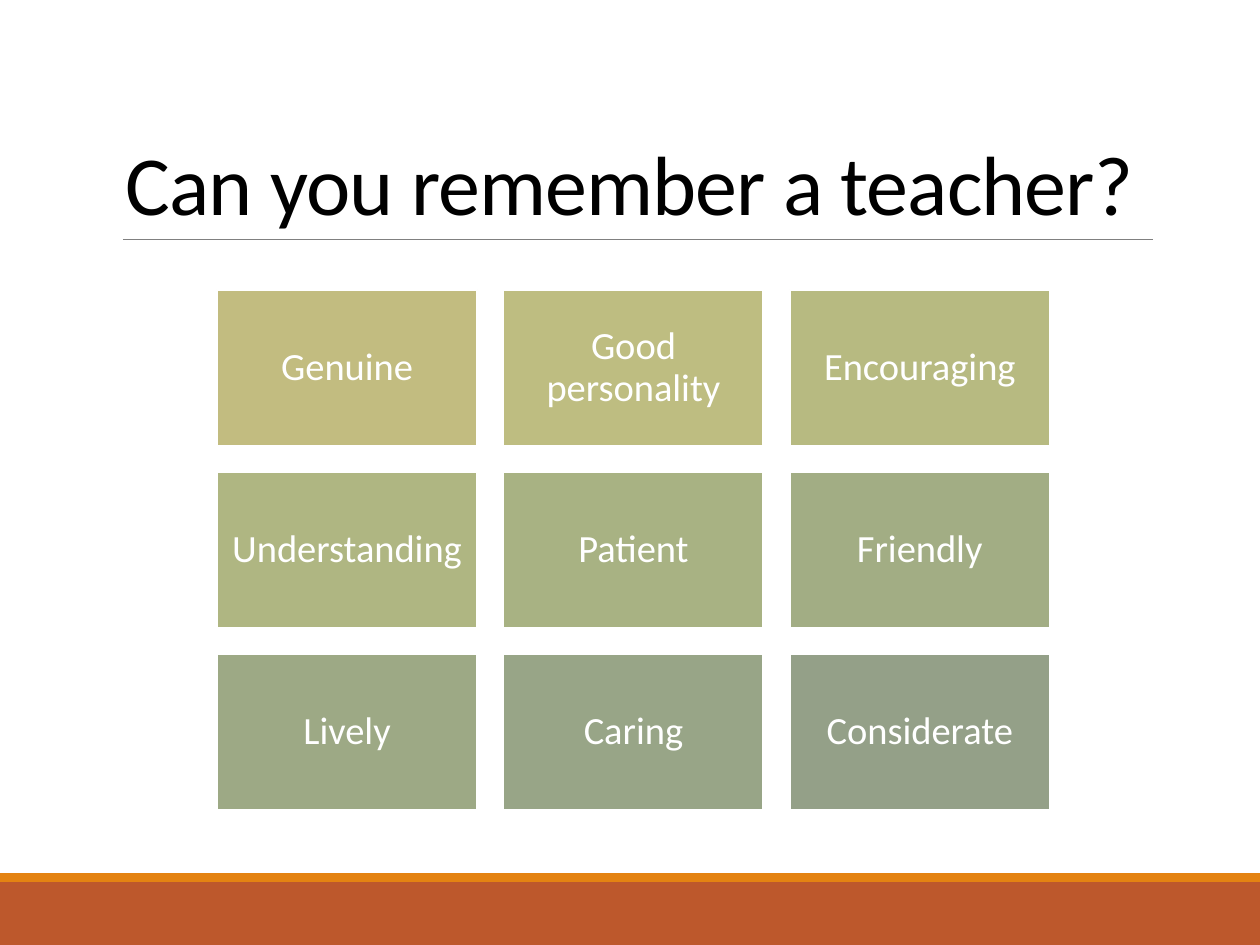
from pptx import Presentation
from pptx.dml.color import RGBColor
from pptx.enum.shapes import MSO_CONNECTOR, MSO_SHAPE
from pptx.enum.text import MSO_ANCHOR, MSO_AUTO_SIZE, PP_ALIGN
from pptx.oxml.ns import qn
from pptx.util import Pt
from lxml.etree import SubElement

PX_PER_INCH = 126
FONT = "Calibri"
WHITE = RGBColor(0xFF, 0xFF, 0xFF)
BLACK = RGBColor(0x00, 0x00, 0x00)
GREY = RGBColor(0x80, 0x80, 0x80)
RUST = RGBColor(0xBD, 0x58, 0x2C)
ORANGE = RGBColor(0xE4, 0x83, 0x12)

QUALITIES = [
    ("Genuine", RGBColor(0xC2, 0xBC, 0x80)),
    ("Good personality", RGBColor(0xBE, 0xBD, 0x81)),
    ("Encouraging", RGBColor(0xB7, 0xBA, 0x81)),
    ("Understanding", RGBColor(0xAF, 0xB6, 0x82)),
    ("Patient", RGBColor(0xA8, 0xB2, 0x83)),
    ("Friendly", RGBColor(0xA2, 0xAD, 0x84)),
    ("Lively", RGBColor(0x9D, 0xA9, 0x85)),
    ("Caring", RGBColor(0x98, 0xA5, 0x87)),
    ("Considerate", RGBColor(0x94, 0xA0, 0x88)),
]


def px(length):
    return round(length * 914400 / PX_PER_INCH)


def add_run(paragraph, text, size, color):
    run = paragraph.add_run()
    run.text = text
    run.font.name = FONT
    run.font.size = Pt(size)
    run.font.color.rgb = color
    return run


def add_block(slide, left, top, width, height, color):
    block = slide.shapes.add_shape(
        MSO_SHAPE.RECTANGLE, px(left), px(top), px(width), px(height))
    block.shadow.inherit = False
    block.fill.solid()
    block.fill.fore_color.rgb = color
    block.line.fill.background()
    return block


def add_footer_bands(slide, left, top, width, height):
    stripe = 9
    add_block(slide, left, top + stripe, width, height - stripe, RUST)
    add_block(slide, left, top, width, stripe, ORANGE)


def add_heading(slide, left, top, width, height, text):
    """Place the title with a rule along the bottom of its box."""
    rule_inset = 10
    bottom = px(top + height)
    rule = slide.shapes.add_connector(
        MSO_CONNECTOR.STRAIGHT, px(left + rule_inset), bottom, px(left + width), bottom)
    rule.line.color.rgb = GREY
    rule.line.width = Pt(0.5)
    SubElement(rule._element.spPr, qn("a:effectLst"))

    title = slide.shapes.title
    title.left, title.top = px(left), px(top)
    title.width, title.height = px(width), px(height)
    frame = title.text_frame
    frame.word_wrap = True
    frame.auto_size = MSO_AUTO_SIZE.NONE
    frame.vertical_anchor = MSO_ANCHOR.BOTTOM
    paragraph = frame.paragraphs[0]
    paragraph.alignment = PP_ALIGN.LEFT
    paragraph.line_spacing = 0.85
    run = add_run(paragraph, text, 48, BLACK)
    run.font._element.set("spc", "-50")


def add_quality_card(slide, left, top, width, height, text, color):
    card = add_block(slide, left, top, width, height, color)
    card.line.color.rgb = WHITE
    card.line.width = Pt(1.25)
    frame = card.text_frame
    frame.word_wrap = True
    frame.vertical_anchor = MSO_ANCHOR.MIDDLE
    frame.margin_left = frame.margin_right = px(11)
    frame.margin_top = frame.margin_bottom = px(11)
    paragraph = frame.paragraphs[0]
    paragraph.alignment = PP_ALIGN.CENTER
    paragraph.line_spacing = 0.9
    add_run(paragraph, text, 22, WHITE)


def add_quality_grid(slide, left, top, width, height, qualities):
    columns, gap = 3, 26
    rows = len(qualities) // columns
    card_width = (width - gap * (columns - 1)) / columns
    card_height = (height - gap * (rows - 1)) / rows
    for index, (text, color) in enumerate(qualities):
        row, column = divmod(index, columns)
        add_quality_card(
            slide,
            left + column * (card_width + gap),
            top + row * (card_height + gap),
            card_width, card_height, text, color)


def main():
    deck = Presentation()
    deck.slide_width, deck.slide_height = px(1260), px(945)
    slide = deck.slides.add_slide(deck.slide_layouts[5])
    add_footer_bands(slide, 0, 873, 1260, 72)
    add_heading(slide, 113, 39, 1040, 200, "Can you remember a teacher?")
    add_quality_grid(slide, 217, 290, 833, 520, QUALITIES)
    deck.save("out.pptx")


if __name__ == "__main__":
    main()
